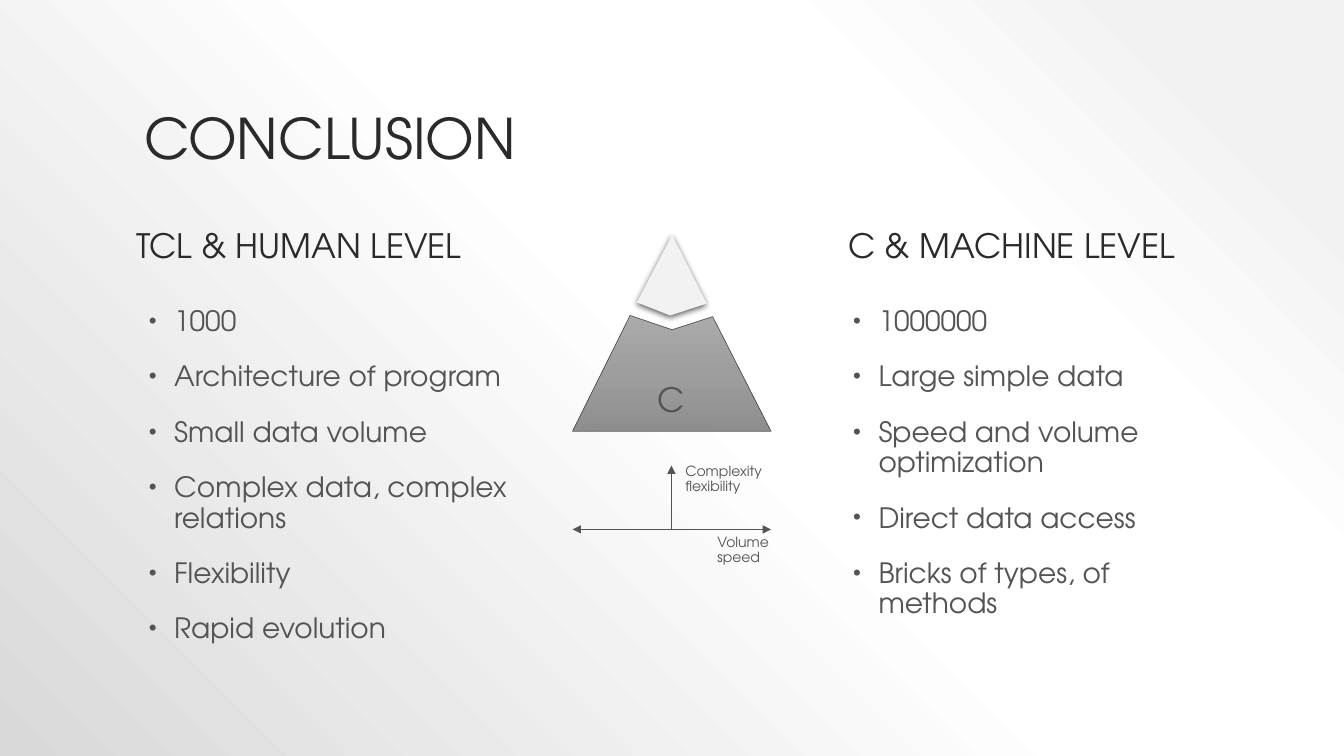
from dataclasses import dataclass

from pptx import Presentation
from pptx.dml.color import RGBColor
from pptx.enum.shapes import MSO_CONNECTOR
from pptx.enum.text import MSO_ANCHOR, MSO_AUTO_SIZE
from pptx.oxml import parse_xml
from pptx.oxml.ns import nsdecls, qn
from pptx.util import Cm, Pt


@dataclass(frozen=True)
class Theme:
    font: str = "TeX Gyre Adventor"
    heading: str = "2A2A2A"
    body: str = "545454"
    tip: str = "F2F2F2"
    shadow: str = "000000"
    background: tuple = ((10, "F2F2F2"), (28, "FFFFFF"), (48, "FFFFFF"), (100, "D9D9D9"))
    base: tuple = ((0, "AAAAAA"), (50, "9E9E9E"), (100, "8E8E8E"))
    title_size: int = 40
    heading_size: int = 24
    bullet_size: int = 20
    label_size: int = 10


THEME = Theme()
CORNER_GLOW = '<a:path path="circle"><a:fillToRect l="100000" b="100000"/></a:path>'
DOWNWARD = '<a:lin ang="5400000" scaled="0"/>'


def drawing(tag, attributes="", content=""):
    return parse_xml(f'<a:{tag} {nsdecls("a")} {attributes}>{content}</a:{tag}>')


def set_gradient(fill, element, stops, direction):
    fill.gradient()
    gradient = next(element.iter(qn("a:gradFill")))
    stop_list = "".join(
        f'<a:gs pos="{position * 1000}"><a:srgbClr val="{color}"/></a:gs>'
        for position, color in stops
    )
    content = f"<a:gsLst>{stop_list}</a:gsLst>{direction}"
    gradient.getparent().replace(gradient, drawing("gradFill", 'rotWithShape="1"', content))


def add_text(slide, box, lines, size, color, anchor=MSO_ANCHOR.TOP, wrap=True):
    shape = slide.shapes.add_textbox(*map(Cm, box))
    text_frame = shape.text_frame
    text_frame.text = "\n".join(lines)
    text_frame.word_wrap = wrap
    text_frame.auto_size = MSO_AUTO_SIZE.NONE if wrap else MSO_AUTO_SIZE.SHAPE_TO_FIT_TEXT
    text_frame.vertical_anchor = anchor
    for paragraph in text_frame.paragraphs:
        paragraph.line_spacing = 0.9
        for run in paragraph.runs:
            run.font.name = THEME.font
            run.font.size = Pt(size)
            run.font.color.rgb = RGBColor.from_string(color)
    return shape


def add_bullets(slide, box, lines):
    shape = add_text(slide, box, lines, THEME.bullet_size, THEME.body)
    for paragraph in shape.text_frame.paragraphs:
        paragraph.space_before = Pt(18)
        properties = paragraph._p.get_or_add_pPr()
        properties.set("marL", str(Cm(0.76)))
        properties.set("indent", str(-Cm(0.64)))
        properties.append(drawing("buClr", content=f'<a:srgbClr val="{THEME.body}"/>'))
        properties.append(drawing("buSzPct", 'val="80000"'))
        properties.append(drawing("buFont", 'typeface="Arial"'))
        properties.append(drawing("buChar", 'char="•"'))


def add_column(slide, heading_left, bullets_left, width, heading, bullets):
    add_text(slide, (heading_left, 5.08, width, 2.34), [heading],
             THEME.heading_size, THEME.heading, MSO_ANCHOR.MIDDLE)
    add_bullets(slide, (bullets_left, 7.62, width, 9.53), bullets)


def add_polygon(group, points):
    start, *rest = [(Cm(x), Cm(y)) for x, y in points]
    builder = group.shapes.build_freeform(*start)
    builder.add_line_segments(rest, close=True)
    shape = builder.convert_to_shape()
    shape.shadow.inherit = False
    return shape


def add_pyramid(slide):
    group = slide.shapes.add_group_shape()
    tip = add_polygon(group, [(16.94, 5.92), (16.05, 7.62), (16.89, 7.95), (17.81, 7.65)])
    tip.fill.solid()
    tip.fill.fore_color.rgb = RGBColor.from_string(THEME.tip)
    tip.line.fill.background()
    tip.element.spPr.find(qn("a:effectLst")).append(drawing(
        "outerShdw",
        f'blurRad="{Pt(4.5)}" dist="{Pt(1.5)}" dir="5400000" algn="ctr" rotWithShape="0"',
        f'<a:srgbClr val="{THEME.shadow}"><a:alpha val="63000"/></a:srgbClr>',
    ))
    base = add_polygon(group, [(15.88, 7.95), (14.43, 10.87), (19.43, 10.87),
                               (17.96, 7.98), (16.94, 8.31)])
    set_gradient(base.fill, base.element.spPr, THEME.base, DOWNWARD)
    base.line.color.rgb = RGBColor.from_string(THEME.body)
    base.line.width = Pt(0.5)


def add_axis(slide, start, end, arrowheads):
    connector = slide.shapes.add_connector(MSO_CONNECTOR.STRAIGHT, *map(Cm, start + end))
    connector.line.color.rgb = RGBColor.from_string(THEME.body)
    connector.line.width = Pt(1)
    outline = connector.line._get_or_add_ln()
    for arrowhead in arrowheads:
        outline.append(drawing(arrowhead, 'type="triangle"'))
    connector.element.spPr.append(drawing("effectLst"))


def add_label(slide, box, lines, size=THEME.label_size):
    add_text(slide, box, lines, size, THEME.body, wrap=False)


def main():
    presentation = Presentation()
    presentation.slide_width = Cm(33.87)
    presentation.slide_height = Cm(19.05)
    slide = presentation.slides.add_slide(presentation.slide_layouts[6])
    set_gradient(slide.background.fill, slide.element, THEME.background, CORNER_GLOW)

    add_text(slide, (3.38, 0.76, 27.1, 3.68), ["CONCLUSION"],
             THEME.title_size, THEME.heading, MSO_ANCHOR.BOTTOM)
    add_column(slide, 3.18, 3.38, 10.13, "TCL & HUMAN LEVEL", [
        "1000",
        "Architecture of program",
        "Small data volume",
        "Complex data, complex relations",
        "Flexibility",
        "Rapid evolution",
    ])
    add_column(slide, 21.13, 21.13, 9.35, "C & MACHINE LEVEL", [
        "1000000",
        "Large simple data",
        "Speed and volume optimization",
        "Direct data access",
        "Bricks of types, of methods",
    ])

    add_pyramid(slide)
    add_axis(slide, (14.43, 13.34), (19.43, 13.34), ("headEnd", "tailEnd"))
    add_axis(slide, (16.92, 13.36), (16.92, 11.73), ("tailEnd",))
    add_label(slide, (17.83, 13.36, 1.85, 1.02), ["Volume", "speed"])
    add_label(slide, (17.02, 11.58, 2.46, 1.02), ["Complexity", "flexibility"])
    add_label(slide, (16.33, 9.55, 1.22, 1.17), ["C"], THEME.heading_size)

    presentation.save("out.pptx")


if __name__ == "__main__":
    main()
